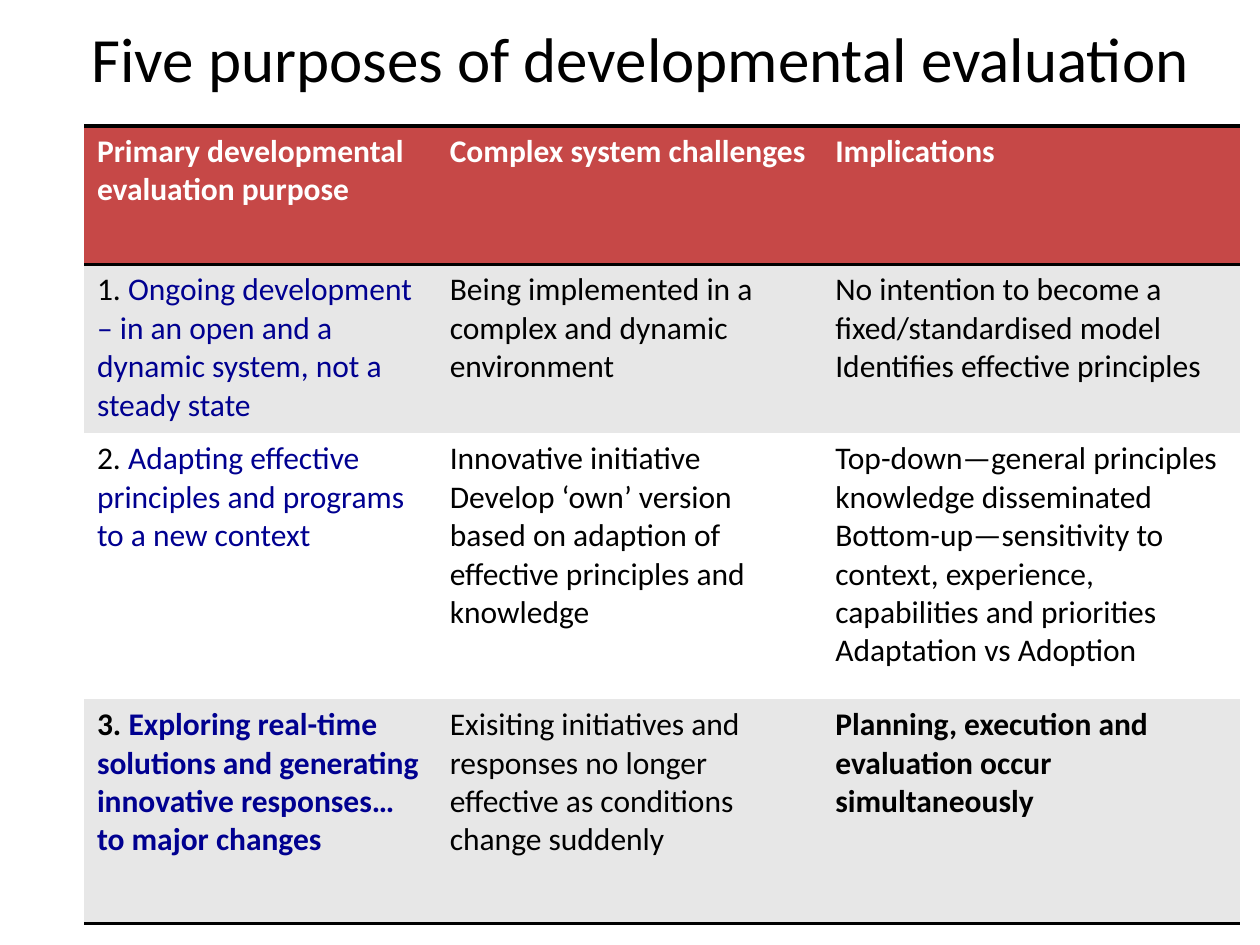
import pptx
import pptx.util
from pptx.dml.color import RGBColor
from pptx.enum.text import MSO_ANCHOR, MSO_AUTO_SIZE, PP_ALIGN
from pptx.oxml import parse_xml
from pptx.oxml.ns import nsdecls

# Content: a cell is a list of paragraphs, a paragraph a list of (words, colour, bold)
TITLE = "Five purposes of developmental evaluation"
HEADINGS = ["Primary developmental evaluation purpose",
            "Complex system challenges", "Implications"]


def plain(*lines, colour="ink", bold=False):
    return [[(line, colour, bold)] for line in lines]


def purpose(number, words, bold=False):
    return [[(f"{number}. ", "ink", bold), (words, "accent", bold)]]


ROWS = [
    [cell for words in HEADINGS for cell in [plain(words, colour="paper", bold=True)]],
    [purpose(1, "Ongoing development – in an open and a dynamic system, not a steady state"),
     plain("Being implemented in a complex and dynamic environment"),
     plain("No intention to become a fixed/standardised model",
           "Identifies effective principles")],
    [purpose(2, "Adapting effective principles and programs to a new context"),
     plain("Innovative initiative",
           "Develop ‘own’ version based on adaption of effective principles and knowledge"),
     plain("Top-down—general principles knowledge disseminated",
           "Bottom-up—sensitivity to context, experience, capabilities and priorities",
           "Adaptation vs Adoption")],
    [purpose(3, "Exploring real-time solutions and generating innovative responses… "
                "to major changes", bold=True),
     plain("Exisiting initiatives and responses no longer effective as conditions "
           "change suddenly"),
     plain("Planning, execution and evaluation occur simultaneously", bold=True)],
]

# Theme and grid, in points and inches
THEME = {"font": "Calibri", "title": 36, "body": 18, "rule": 2,
         "ink": "000000", "paper": "FFFFFF", "accent": "000090",
         "header": "C64847", "band": "E7E7E7"}
COLUMNS = [2.8, 3.06, 3.31]
HEIGHTS = [1.1, 1.34, 2.11, 1.78]
LEFT, TOP = 0.67, 1
inch = pptx.util.Inches


def add_span(para, words, size, colour, bold=False):
    span = para.add_run()
    span.text = words
    span.font.name = THEME["font"]
    span.font.size = pptx.util.Pt(size)
    span.font.bold = bold
    span.font.color.rgb = RGBColor.from_string(THEME[colour])


def add_rules(cell, sides):
    """Draw horizontal rules on the cell, ahead of its fill; other sides stay bare."""
    properties = cell._tc.get_or_add_tcPr()
    for place, side in enumerate(("L", "R", "T", "B")):
        if side in sides:
            width = pptx.util.Pt(THEME["rule"])
            paint = f'<a:solidFill><a:srgbClr val="{THEME["ink"]}"/></a:solidFill>'
        else:
            width, paint = 0, "<a:noFill/>"
        properties.insert(place, parse_xml(
            f'<a:ln{side} {nsdecls("a")} w="{width}">{paint}</a:ln{side}>'))


def fill_cell(cell, paragraphs, fill, sides):
    cell.fill.solid()
    cell.fill.fore_color.rgb = RGBColor.from_string(THEME[fill])
    add_rules(cell, sides)
    frame = cell.text_frame
    for index, spans in enumerate(paragraphs):
        para = frame.add_paragraph() if index else frame.paragraphs[0]
        for words, colour, bold in spans:
            add_span(para, words, THEME["body"], colour, bold)


def main():
    deck = pptx.Presentation()
    deck.slide_width, deck.slide_height = inch(10), inch(7.5)
    page = deck.slides.add_slide(deck.slide_layouts[5])

    # Title
    title = page.shapes.title
    title.left, title.top, title.width, title.height = map(inch, (0.58, -0.17, 9, 1.25))
    frame = title.text_frame
    frame.word_wrap = True
    frame.auto_size = MSO_AUTO_SIZE.NONE
    frame.vertical_anchor = MSO_ANCHOR.MIDDLE
    para = frame.paragraphs[0]
    para.alignment = PP_ALIGN.CENTER
    add_span(para, TITLE, THEME["title"], "ink")

    # Table: header, then alternating bands
    table = page.shapes.add_table(len(ROWS), len(COLUMNS), inch(LEFT), inch(TOP),
                                  inch(sum(COLUMNS)), inch(sum(HEIGHTS))).table
    for column, width in zip(table.columns, COLUMNS):
        column.width = inch(width)
    for index, (row, height) in enumerate(zip(ROWS, HEIGHTS)):
        table.rows[index].height = inch(height)
        fill = "header" if index == 0 else ("band" if index % 2 else "paper")
        # The header's lower rule is also the upper rule of the first band
        sides = {0: "TB", 1: "T", len(ROWS) - 1: "B"}.get(index, "")
        for cell, paragraphs in zip(table.rows[index].cells, row):
            fill_cell(cell, paragraphs, fill, sides)

    deck.save("out.pptx")


if __name__ == "__main__":
    main()
